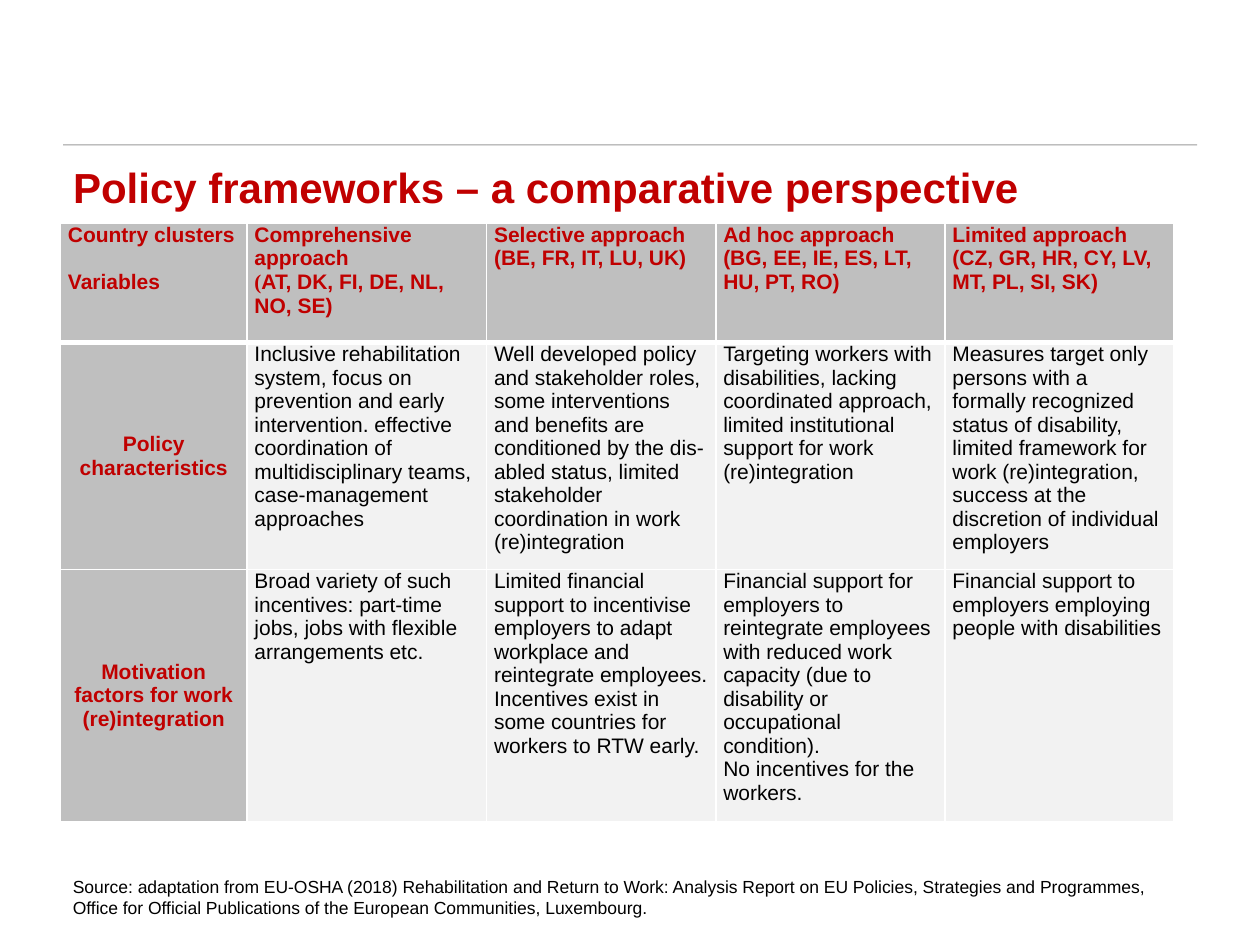
import pptx
import pptx.util
import pptx.dml.color
import pptx.enum.shapes
import pptx.enum.text
import pptx.oxml
import pptx.oxml.ns

Cm, Pt = pptx.util.Cm, pptx.util.Pt
Align, Anchor = pptx.enum.text.PP_ALIGN, pptx.enum.text.MSO_ANCHOR

# Content: \n starts a paragraph, \v breaks a line
TITLE = "Policy frameworks – a comparative perspective"
HEADS = [
    "Country clusters\nVariables",
    "Comprehensive approach\n(AT, DK, FI, DE, NL, NO, SE)",
    "Selective approach\n(BE, FR, IT, LU, UK)",
    "Ad hoc approach\n(BG, EE, IE, ES, LT, HU, PT, RO)",
    "Limited approach\v(CZ, GR, HR, CY, LV, MT, PL, SI, SK)",
]
ROWS = [
    ["Policy characteristics",
     "Inclusive rehabilitation system, focus on prevention and early intervention. effective\n"
     "coordination of multidisciplinary teams, case-management approaches",
     "Well developed policy and stakeholder roles, some interventions and benefits are "
     "conditioned by the dis-abled status, limited stakeholder coordination in work "
     "(re)integration",
     "Targeting workers with disabilities, lacking\n"
     "coordinated approach, limited institutional support for work (re)integration",
     "Measures target only persons with a formally recognized status of disability, limited "
     "framework for work (re)integration, success at the discretion of individual employers"],
    ["Motivation factors for work (re)integration",
     "Broad variety of such incentives: part-time jobs, jobs with flexible arrangements etc.",
     "Limited financial support to incentivise employers to adapt workplace and reintegrate "
     "employees. Incentives exist in some countries for workers to RTW early.",
     "Financial support for employers to reintegrate employees with reduced work capacity "
     "(due to disability or occupational condition).\nNo incentives for the workers.",
     "Financial support to employers employing people with disabilities"],
]
SOURCE = ("Source: adaptation from EU-OSHA (2018) Rehabilitation and Return to Work: Analysis "
          "Report on EU Policies, Strategies and Programmes, Office for Official Publications "
          "of the European Communities, Luxembourg.")

THEME = {
    "font": "Arial", "serif": "Times New Roman",
    "title": 24, "cell": 12, "note": 10,
    "red": "C00000", "ink": "000000", "white": "FFFFFF",
    "head": "BFBFBF", "body": "F2F2F2",
}
LEFT, WIDTH = 1.22, 22.45
COLS = [3.76, 4.83, 4.62, 4.62, 4.62]
HEIGHTS = [2.41, 4.57, 5.08]


def rgb(name):
    return pptx.dml.color.RGBColor.from_string(THEME[name])


def style(frame, size, color, bold=False, align=Align.LEFT):
    for par in frame.paragraphs:
        par.alignment = align
        font = par.font
        font.name, font.size, font.bold = THEME["font"], Pt(THEME[size]), bold
        font.color.rgb = rgb(color)


def edge(cell, low):
    """Draw white borders, with the bottom one low points wide."""
    props = cell._tc.get_or_add_tcPr()
    for side, width in (("L", 1), ("R", 1), ("T", 1), ("B", low)):
        props.append(pptx.oxml.parse_xml(
            f'<a:ln{side} {pptx.oxml.ns.nsdecls("a")} w="{Pt(width)}"><a:solidFill>'
            f'<a:srgbClr val="{THEME["white"]}"/></a:solidFill></a:ln{side}>'))


def rule(slide):
    line = slide.shapes.add_connector(
        pptx.enum.shapes.MSO_CONNECTOR.STRAIGHT, Cm(1.27), Cm(2.92), Cm(24.13), Cm(2.92))
    line.line.width = Pt(0.5)
    line.line.color.rgb = rgb("ink")
    tint = line._element.spPr.find(".//" + pptx.oxml.ns.qn("a:srgbClr"))
    tint.append(pptx.oxml.parse_xml(
        f'<a:alpha {pptx.oxml.ns.nsdecls("a")} val="40000"/>'))
    line._element.spPr.append(pptx.oxml.parse_xml(
        f'<a:effectLst {pptx.oxml.ns.nsdecls("a")}/>'))


def grid(slide):
    table = slide.shapes.add_table(
        len(HEIGHTS), len(COLS), Cm(LEFT), Cm(4.5), Cm(WIDTH), Cm(sum(HEIGHTS))).table
    for col, width in zip(table.columns, COLS):
        col.width = Cm(width)
    for row, height in zip(table.rows, HEIGHTS):
        row.height = Cm(height)

    for r, texts in enumerate([HEADS] + ROWS):
        for c, text in enumerate(texts):
            cell = table.cell(r, c)
            label = r == 0 or c == 0
            side = r > 0 and c == 0
            cell.text = text
            cell.margin_left = cell.margin_right = Cm(0.15)
            cell.margin_top = cell.margin_bottom = 0
            cell.vertical_anchor = Anchor.MIDDLE if side else Anchor.TOP
            edge(cell, 3 if r == 0 else 1)
            cell.fill.solid()
            cell.fill.fore_color.rgb = rgb("head" if label else "body")
            style(cell.text_frame, "cell", "red" if label else "ink", label,
                  Align.CENTER if side else Align.LEFT)

    # Gap between the two corner labels, and the serif bracket
    table.cell(0, 0).text_frame.paragraphs[1].space_before = Pt(13.5)
    par = table.cell(0, 1).text_frame.paragraphs[1]
    mark, rest = par.runs[0], par.add_run()
    mark.text, rest.text = mark.text[0], mark.text[1:]
    mark.font.name = THEME["serif"]


def main():
    deck = pptx.Presentation()
    deck.slide_width, deck.slide_height = Cm(25.4), Cm(19.05)
    slide = deck.slides.add_slide(deck.slide_layouts[5])
    rule(slide)

    # Title
    title = slide.shapes.title
    title.left, title.top, title.width, title.height = Cm(LEFT), Cm(3.12), Cm(22.86), Cm(1.27)
    title.text_frame.text = TITLE
    title.text_frame.vertical_anchor = Anchor.TOP
    style(title.text_frame, "title", "red", True)

    grid(slide)

    # Source note
    note = slide.shapes.add_textbox(Cm(LEFT), Cm(17.53), Cm(WIDTH), Cm(1.12)).text_frame
    note.word_wrap = True
    note.text = SOURCE
    style(note, "note", "ink")
    deck.save("out.pptx")


if __name__ == "__main__":
    main()
